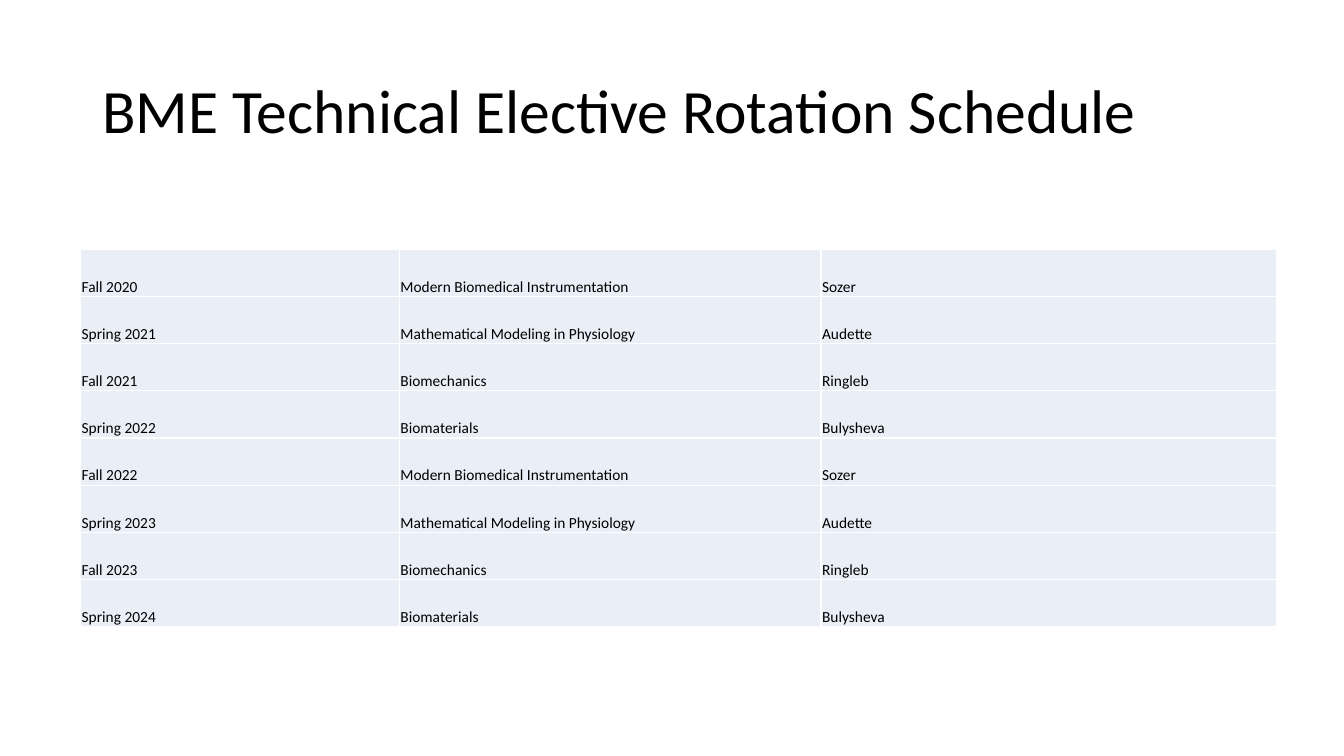
from dataclasses import dataclass
from itertools import cycle, islice

from lxml import etree
from pptx import Presentation
from pptx.dml import color
from pptx.enum import text
from pptx.oxml import ns
from pptx import util as u


@dataclass(frozen=True)
class Theme:
    font: str = "Calibri"
    ink: str = "000000"
    cell: str = "EAEFF7"
    border: str = "FFFFFF"
    title_size: int = 44
    cell_size: int = 11
    border_width: int = 1


THEME = Theme()
GRID_COLUMNS = 160
UNIT = u.Inches(13.333) / GRID_COLUMNS

FIRST_YEAR = 2020
SEMESTERS = 8
ROTATION = [
    ("Modern Biomedical Instrumentation", "Sozer"),
    ("Mathematical Modeling in Physiology", "Audette"),
    ("Biomechanics", "Ringleb"),
    ("Biomaterials", "Bulysheva"),
]


def grid(*units):
    return [u.Emu(round(n * UNIT)) for n in units]


def rgb(value):
    return color.RGBColor.from_string(value)


def write(tf, content, size):
    p = tf.paragraphs[0]
    p.text = content
    p.font.name = THEME.font
    p.font.size = u.Pt(size)
    p.font.color.rgb = rgb(THEME.ink)
    return p


def add_title(slide, content, box):
    tf = slide.shapes.add_textbox(*grid(*box)).text_frame
    tf.word_wrap = True
    tf.vertical_anchor = text.MSO_ANCHOR.MIDDLE
    write(tf, content, THEME.title_size).line_spacing = 0.9


def set_borders(cell):
    props = cell._tc.get_or_add_tcPr()
    for i, side in enumerate(("lnL", "lnR", "lnT", "lnB")):
        line = etree.Element(ns.qn(f"a:{side}"), w=str(u.Pt(THEME.border_width)))
        fill = etree.SubElement(line, ns.qn("a:solidFill"))
        etree.SubElement(fill, ns.qn("a:srgbClr"), val=THEME.border)
        props.insert(i, line)


def fill_cell(cell, content):
    cell.margin_left = cell.margin_right = cell.margin_top = u.Inches(0.01)
    cell.margin_bottom = 0
    cell.vertical_anchor = text.MSO_ANCHOR.BOTTOM
    cell.fill.solid()
    cell.fill.fore_color.rgb = rgb(THEME.cell)
    set_borders(cell)
    write(cell.text_frame, content, THEME.cell_size)


def add_schedule(slide, rows, left, top, widths, height):
    box = grid(left, top, sum(widths), height)
    table = slide.shapes.add_table(len(rows), len(widths), *box).table
    table.first_row = table.horz_banding = False
    for column, width in zip(table.columns, grid(*widths)):
        column.width = width
    for r, row in enumerate(rows):
        for c, content in enumerate(row):
            fill_cell(table.cell(r, c), content)


def schedule_rows():
    rows = []
    for i, course in enumerate(islice(cycle(ROTATION), SEMESTERS)):
        season = "Spring" if i % 2 else "Fall"
        rows.append((f"{season} {FIRST_YEAR + (i + 1) // 2}", *course))
    return rows


def main():
    prs = Presentation()
    prs.slide_width, prs.slide_height = u.Inches(13.333), u.Inches(7.5)
    slide = prs.slides.add_slide(prs.slide_layouts[6])
    add_title(slide, "BME Technical Elective Rotation Schedule", (11, 4.8, 138, 17.4))
    add_schedule(slide, schedule_rows(), 9.6, 29.65, (37.95, 50.2, 54.25), 45)
    prs.save("out.pptx")


if __name__ == "__main__":
    main()
